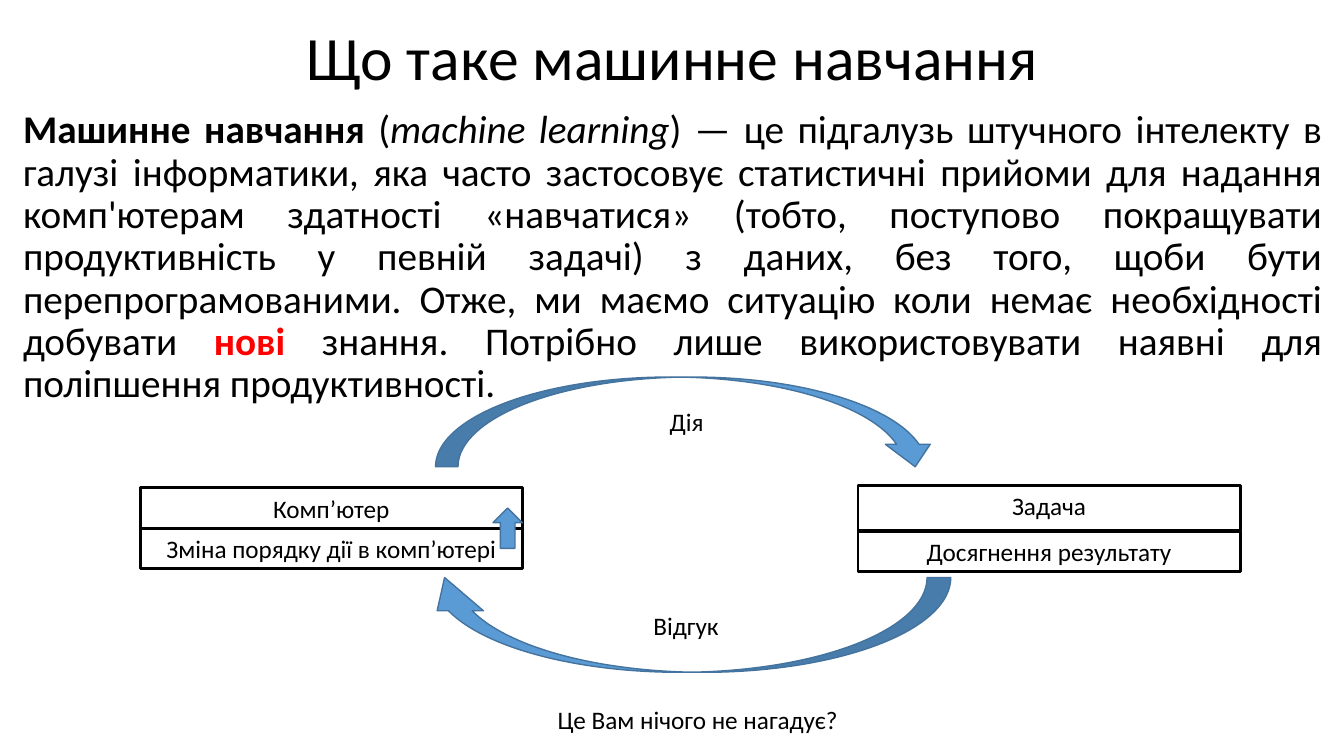
"""Build the slide that explains machine learning as an action and feedback loop."""
from dataclasses import dataclass

from pptx import Presentation
from pptx.dml.color import RGBColor
from pptx.enum.shapes import MSO_SHAPE as Preset
from pptx.enum.text import MSO_ANCHOR as Anchor, MSO_AUTO_SIZE as AutoSize, PP_ALIGN as Align
from pptx.util import Inches, Pt


@dataclass(frozen=True)
class Theme:
    """Hold the font, colours and sizes of the slide."""
    font: str = "Calibri"
    ink: RGBColor = RGBColor(0, 0, 0)
    accent: RGBColor = RGBColor(255, 0, 0)
    arrow_fill: RGBColor = RGBColor(0x5B, 0x9B, 0xD5)
    arrow_line: RGBColor = RGBColor(0x43, 0x73, 0x9E)
    title_size: Pt = Pt(44)
    body_size: Pt = Pt(28)
    label_size: Pt = Pt(18)
    box_line: Pt = Pt(2)
    arrow_outline: Pt = Pt(1)


THEME = Theme()
BOX_WIDTH = 3.79
BOXES = [
    ("Комп’ютер", 1.39, 4.84, 0.4),
    ("Зміна порядку дії в комп’ютері", 1.39, 5.24, 0.4),
    ("Задача", 8.51, 4.82, 0.44),
    ("Досягнення результату", 8.51, 5.27, 0.4),
]
DEFINITION = [
    ("Машинне навчання", "bold"),
    (" (", "plain"),
    ("machine learning", "italic"),
    (") — це підгалузь штучного інтелекту в галузі інформатики, яка часто "
     "застосовує статистичні прийоми для надання комп'ютерам здатності «навчатися» "
     "(тобто, поступово покращувати продуктивність у певній задачі) з даних, без того, "
     "щоби бути перепрограмованими. Отже, ми маємо ситуацію коли немає необхідності "
     "добувати ", "plain"),
    ("нові", "accent"),
    (" знання. Потрібно лише використовувати наявні для поліпшення продуктивності.", "plain"),
]


def format_run(run, size, style="plain"):
    """Apply the theme font with a size and a named style."""
    run.font.name = THEME.font
    run.font.size = size
    run.font.bold = style in ("bold", "accent")
    run.font.italic = style == "italic"
    run.font.color.rgb = THEME.accent if style == "accent" else THEME.ink


def write_text(shape, runs, size, align=Align.CENTER, anchor=Anchor.TOP):
    """Write styled runs in a shape and return their paragraph."""
    frame = shape.text_frame
    frame.word_wrap = True
    frame.vertical_anchor = anchor
    paragraph = frame.paragraphs[0]
    paragraph.alignment = align
    for text, style in runs:
        run = paragraph.add_run()
        run.text = text
        format_run(run, size, style)
    return paragraph


def add_text(slide, runs, bounds, size, align=Align.CENTER, anchor=Anchor.TOP):
    """Add a text box and return its paragraph."""
    shape = slide.shapes.add_textbox(*map(Inches, bounds))
    return write_text(shape, runs, size, align, anchor)


def add_box(slide, label, left, top, height):
    """Add an outlined box with a label."""
    bounds = map(Inches, (left, top, BOX_WIDTH, height))
    shape = slide.shapes.add_shape(Preset.RECTANGLE, *bounds)
    shape.shadow.inherit = False
    shape.fill.background()
    shape.line.color.rgb = THEME.ink
    shape.line.width = THEME.box_line
    write_text(shape, [(label, "plain")], THEME.label_size)
    shape.text_frame.auto_size = AutoSize.SHAPE_TO_FIT_TEXT


def add_arrow(slide, preset, bounds, label=""):
    """Add a block arrow with an optional label and return it."""
    shape = slide.shapes.add_shape(preset, *map(Inches, bounds))
    shape.shadow.inherit = False
    shape.fill.solid()
    shape.fill.fore_color.rgb = THEME.arrow_fill
    shape.line.color.rgb = THEME.arrow_line
    shape.line.width = THEME.arrow_outline
    if label:
        write_text(shape, [(label, "plain")], THEME.label_size, anchor=Anchor.MIDDLE)
    return shape


def add_feedback_arrow(slide):
    """Add the mirrored arrow that leads back to the computer."""
    arrow = add_arrow(slide, Preset.CURVED_UP_ARROW, (4.18, 5.73, 5.25, 0.94), "Відгук")
    for index, value in enumerate((0.25, 0.489, 0.351)):
        arrow.adjustments[index] = value
    arrow._element.spPr.xfrm.set("flipH", "1")


def main():
    """Build and save the presentation."""
    presentation = Presentation()
    presentation.slide_width = Inches(13.33)
    presentation.slide_height = Inches(7.5)
    slide = presentation.slides.add_slide(presentation.slide_layouts[6])

    title = add_text(slide, [("Що таке машинне навчання", "plain")], (0.92, 0, 11.5, 1.2),
                     THEME.title_size, anchor=Anchor.MIDDLE)
    title.line_spacing = 0.9
    definition = add_text(slide, DEFINITION, (0.13, 1.04, 13.08, 2.18),
                          THEME.body_size, Align.JUSTIFY)
    definition.line_spacing = 0.9
    definition.space_before = Pt(10)

    for box in BOXES:
        add_box(slide, *box)
    add_arrow(slide, Preset.CURVED_DOWN_ARROW, (4.32, 3.74, 4.98, 0.89), "Дія")
    add_feedback_arrow(slide)
    add_arrow(slide, Preset.UP_ARROW, (4.89, 5.04, 0.29, 0.4))
    add_text(slide, [("Це Вам нічого не нагадує?", "plain")], (4.54, 6.94, 4.76, 0.4),
             THEME.label_size)
    presentation.save("out.pptx")


if __name__ == "__main__":
    main()
